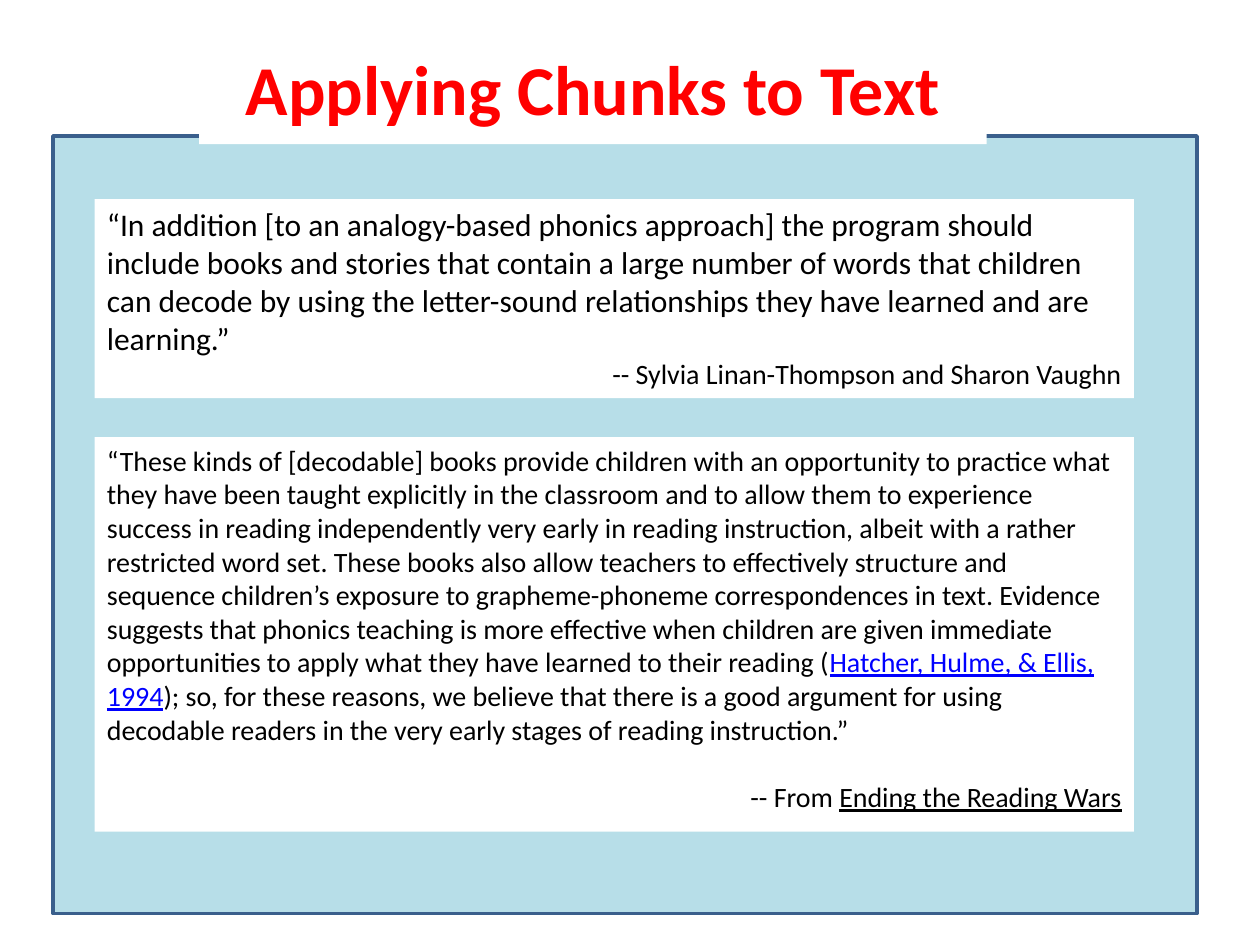
from pptx import Presentation
from pptx.dml.color import RGBColor
from pptx.enum.shapes import MSO_SHAPE
from pptx.enum.text import MSO_ANCHOR, MSO_AUTO_SIZE, PP_ALIGN
from pptx.util import Inches, Pt

RECT = MSO_SHAPE.RECTANGLE
TOP = MSO_ANCHOR.TOP
GROW = MSO_AUTO_SIZE.SHAPE_TO_FIT_TEXT
LEFT, CENTER, RIGHT = PP_ALIGN.LEFT, PP_ALIGN.CENTER, PP_ALIGN.RIGHT

FONT = "Calibri"
BLACK, WHITE, RED, BLUE = "000000", "FFFFFF", "FF0000", "0000FF"
PANEL, EDGE = "B7DEE8", "3A5F8C"

PHONICS = (
    "“In addition [to an analogy-based phonics approach] the program should "
    "include books and stories that contain a large number of words that "
    "children can decode by using the letter-sound relationships they have "
    "learned and are learning.”"
)
BOOKS = (
    "“These kinds of [decodable] books provide children with an opportunity "
    "to practice what they have been taught explicitly in the classroom and "
    "to allow them to experience success in reading independently very early "
    "in reading instruction, albeit with a rather restricted word set. These "
    "books also allow teachers to effectively structure and sequence "
    "children’s exposure to grapheme-phoneme correspondences in text. "
    "Evidence suggests that phonics teaching is more effective when children "
    "are given immediate opportunities to apply what they have learned to "
    "their reading ("
)
REASONS = (
    "); so, for these reasons, we believe that there is a good argument for "
    "using decodable readers in the very early stages of reading instruction.”"
)


def color(code):
    """Turn a hex string into a colour."""
    return RGBColor.from_string(code)


def paint(shape, code):
    """Fill a shape with one colour."""
    shape.fill.solid()
    shape.fill.fore_color.rgb = color(code)


def style(run, size, code=BLACK, bold=False, under=False):
    """Format one run of text."""
    font = run.font
    font.name, font.size = FONT, Pt(size)
    font.bold, font.underline = bold, under
    font.color.rgb = color(code)


def add_panel(slide):
    """Draw the framed panel behind everything else."""
    panel = slide.shapes.add_shape(
        RECT, Inches(0.42), Inches(1.08), Inches(9.08), Inches(6.17))
    panel.shadow.inherit = False
    paint(panel, PANEL)
    panel.line.color.rgb = color(EDGE)
    panel.line.width = Pt(2)
    slide.shapes.title.element.addprevious(panel.element)


def set_title(slide, text):
    """Place and format the title."""
    title = slide.shapes.title
    title.left, title.top = Inches(1.58), Inches(0.31)
    title.width, title.height = Inches(6.25), Inches(0.77)
    paint(title, WHITE)
    frame = title.text_frame
    frame.text = text
    frame.vertical_anchor, frame.auto_size = TOP, GROW
    para = frame.paragraphs[0]
    para.alignment = CENTER
    style(para.runs[0], 40, RED, bold=True)


def fill_para(para, parts, size, align):
    """Write styled parts into a paragraph."""
    para.alignment = align
    for text, code, under in parts:
        run = para.add_run()
        run.text = text
        style(run, size, code, under=under)


def add_quote(slide, top, height, size, quote, credit, gap=0):
    """Add a white box with a quote and its right-aligned credit."""
    box = slide.shapes.add_textbox(
        Inches(0.75), Inches(top), Inches(8.25), Inches(height))
    paint(box, WHITE)
    frame = box.text_frame
    frame.word_wrap, frame.auto_size = True, GROW
    fill_para(frame.paragraphs[0], quote, size, LEFT)
    para = frame.add_paragraph()
    para.space_before = Pt(gap)
    fill_para(para, credit, 16, RIGHT)


def main():
    """Build and save the slide."""
    deck = Presentation()
    deck.slide_width, deck.slide_height = Inches(10), Inches(7.5)
    slide = deck.slides.add_slide(deck.slide_layouts[5])
    add_panel(slide)
    set_title(slide, "Applying Chunks to Text")
    add_quote(
        slide, 1.58, 1.58, 18,
        [(PHONICS, BLACK, False)],
        [("-- Sylvia Linan-Thompson and Sharon Vaughn", BLACK, False)])
    add_quote(
        slide, 3.47, 3.13, 16,
        [(BOOKS, BLACK, False),
         ("Hatcher, Hulme, & Ellis, 1994", BLUE, True),
         (REASONS, BLACK, False)],
        [("-- From ", BLACK, False),
         ("Ending the Reading Wars", BLACK, True)],
        gap=19.5)
    deck.save("out.pptx")


if __name__ == "__main__":
    main()
